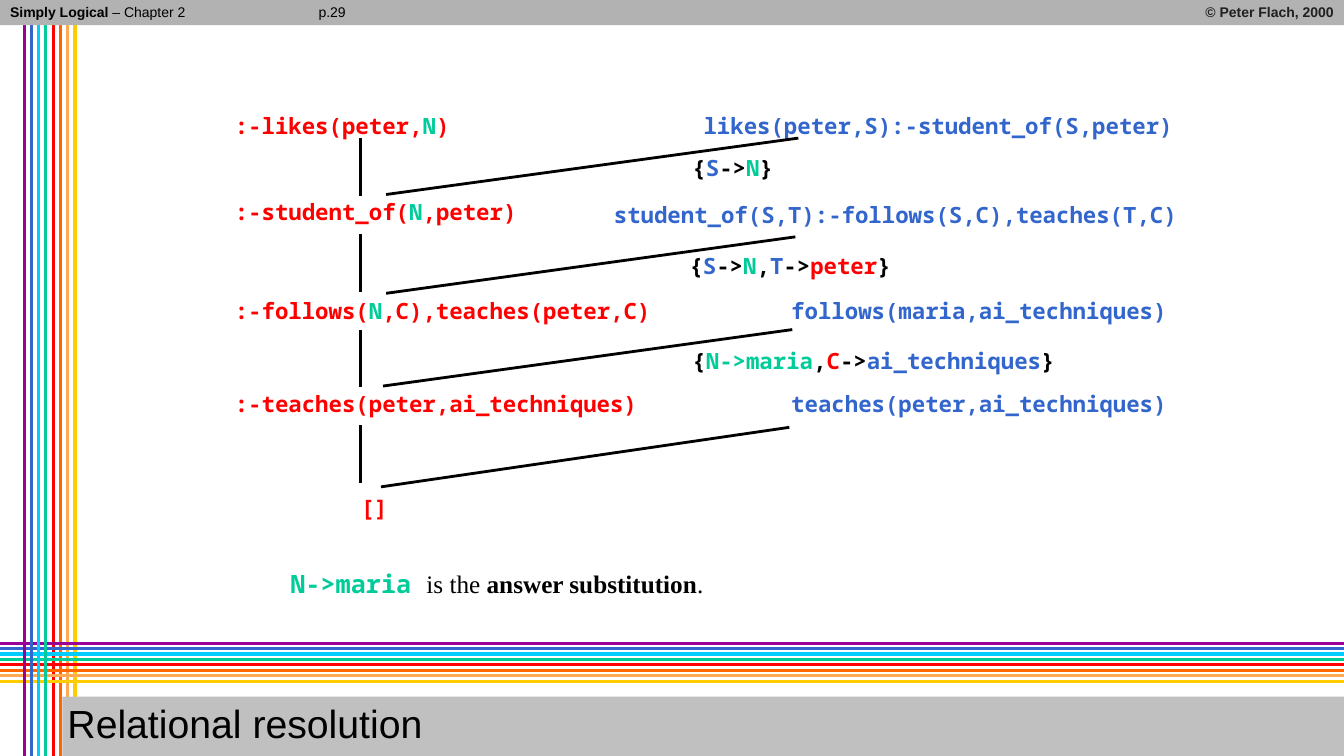
from lxml.etree import SubElement
from pptx import Presentation
from pptx.dml.color import RGBColor
from pptx.enum.shapes import MSO_CONNECTOR, MSO_SHAPE
from pptx.enum.text import MSO_ANCHOR, MSO_AUTO_SIZE, PP_ALIGN
from pptx.oxml.ns import qn
from pptx.util import Inches, Pt

BLACK = RGBColor(0x00, 0x00, 0x00)
CHARCOAL = RGBColor(0x20, 0x20, 0x20)
HEADER_GREY = RGBColor(0xB2, 0xB2, 0xB2)
TITLE_GREY = RGBColor(0xC0, 0xC0, 0xC0)
PURPLE = RGBColor(0x99, 0x00, 0x99)
BLUE = RGBColor(0x33, 0x66, 0xCC)
CYAN = RGBColor(0x00, 0xCC, 0xFF)
GREEN = RGBColor(0x00, 0xCC, 0x99)
RED = RGBColor(0xFF, 0x00, 0x00)
ORANGE = RGBColor(0xFF, 0x66, 0x00)
APRICOT = RGBColor(0xFF, 0xA9, 0x53)
YELLOW = RGBColor(0xFF, 0xCC, 0x00)
RAINBOW = [PURPLE, BLUE, CYAN, GREEN, RED, ORANGE, APRICOT, YELLOW]

SANS, MONO, SERIF = "Arial", "Noto Sans Mono", "Times New Roman"

# left, top, width in percent of the slide, then (text, colour) pieces
GOALS = [
    (17.1, 14.53, 16.88, [(":-likes(peter,", RED), ("N", GREEN), (")", RED)]),
    (17.1, 26, 21.83, [(":-student_of(", RED), ("N", GREEN), (",peter)", RED)]),
    (17.1, 39.07, 31.88, [(":-follows(", RED), ("N", GREEN),
                          (",C),teaches(peter,C)", RED)]),
    (17.1, 51.33, 30.83, [(":-teaches(peter,ai_techniques)", RED)]),
    (26.48, 65.07, 2.85, [("[]", RED)]),
]
CLAUSES = [
    (51.98, 14.53, 35.85, [("likes(peter,S):-student_of(S,peter)", BLUE)]),
    (45.3, 26.4, 42.83, [("student_of(S,T):-follows(S,C),teaches(T,C)", BLUE)]),
    (58.5, 39.07, 28.88, [("follows(maria,ai_techniques)", BLUE)]),
    (58.5, 51.33, 28.88, [("teaches(peter,ai_techniques)", BLUE)]),
]
SUBSTITUTIONS = [
    (51.15, 20.13, 6.83, [("{", BLACK), ("S", BLUE), ("->", BLACK),
                          ("N", GREEN), ("}", BLACK)]),
    (50.93, 33.07, 15.83, [("{", BLACK), ("S", BLUE), ("->", BLACK),
                           ("N", GREEN), (",", BLACK), ("T", BLUE),
                           ("->", BLACK), ("peter", RED), ("}", BLACK)]),
    (51.15, 45.73, 27.83, [("{", BLACK), ("N->maria", GREEN), (",", BLACK),
                           ("C", RED), ("->", BLACK),
                           ("ai_techniques", BLUE), ("}", BLACK)]),
]
CLAUSE_LINKS = [
    (28.73, 25.73, 59.4, 18.27),
    (28.73, 38.8, 59.18, 31.33),
    (28.5, 51.07, 58.95, 43.6),
    (28.35, 64.4, 58.73, 56.53),
]


class SlideBuilder:
    """Draws on one slide; all lengths are percentages of its size."""

    margin = Inches(0.05)
    line_spacing = 0.9

    def __init__(self, presentation):
        self.width = presentation.slide_width
        self.height = presentation.slide_height
        self.slide = presentation.slides.add_slide(presentation.slide_layouts[6])

    def across(self, percent):
        return round(self.width * percent / 100)

    def down(self, percent):
        return round(self.height * percent / 100)

    def box(self, left, top, width, height):
        return (self.across(left), self.down(top),
                self.across(width), self.down(height))

    def line(self, x1, y1, x2, y2, color=BLACK, weight=2):
        connector = self.slide.shapes.add_connector(
            MSO_CONNECTOR.STRAIGHT, self.across(x1), self.down(y1),
            self.across(x2), self.down(y2))
        connector.line.color.rgb = color
        connector.line.width = Pt(weight)
        SubElement(connector._element.spPr, qn("a:effectLst"))

    def bar(self, left, top, width, height, color):
        shape = self.slide.shapes.add_shape(
            MSO_SHAPE.RECTANGLE, *self.box(left, top, width, height))
        shape.shadow.inherit = False
        shape.fill.solid()
        shape.fill.fore_color.rgb = color
        shape.line.fill.background()
        return shape

    def label(self, shape, pieces, size, font=SANS, align=PP_ALIGN.LEFT,
              spacing=line_spacing):
        """Fill a shape with (text, colour[, bold[, font]]) pieces."""
        frame = shape.text_frame
        frame.margin_left = frame.margin_right = self.margin
        frame.margin_top = frame.margin_bottom = self.margin
        paragraph = frame.paragraphs[0]
        paragraph.alignment = align
        paragraph.line_spacing = spacing
        for text, color, *style in pieces:
            run = paragraph.add_run()
            run.text = text
            run.font.size = Pt(size)
            run.font.color.rgb = color
            run.font.bold = style[0] if style else font == MONO
            run.font.name = style[1] if len(style) > 1 else font

    def text(self, left, top, width, height, pieces, size, wrap=False, **style):
        shape = self.slide.shapes.add_textbox(*self.box(left, top, width, height))
        shape.text_frame.word_wrap = wrap
        shape.text_frame.auto_size = MSO_AUTO_SIZE.SHAPE_TO_FIT_TEXT
        self.label(shape, pieces, size, **style)

    def vertical_stripes(self, numbers):
        for number in numbers:
            x = 1.8 + 0.54 * number
            self.line(x, 0, x, 100, RAINBOW[number], 2.25)

    def horizontal_stripes(self):
        for number, color in enumerate(RAINBOW):
            y = 85.07 + 0.72 * number
            self.line(100, y, 0, y, color, 2.25)


def main():
    presentation = Presentation()
    presentation.slide_width = Inches(13.33)
    presentation.slide_height = Inches(7.5)
    builder = SlideBuilder(presentation)

    builder.vertical_stripes(range(4, 8))
    builder.horizontal_stripes()
    builder.vertical_stripes(range(4))

    builder.bar(0, 0, 100, 3.33, HEADER_GREY)
    builder.text(0.38, 0, 19.28, 3.6, [("Simply Logical", BLACK, True),
                                       (" – Chapter 2", BLACK)], 10, wrap=True)
    builder.text(23.33, 0, 2.85, 3.47, [("p.29", BLACK)], 10)
    builder.text(73.35, 0, 26.25, 3.6, [("© Peter Flach, 2000", CHARCOAL, True)],
                 10, wrap=True, align=PP_ALIGN.RIGHT)

    title = builder.bar(4.65, 92.13, 95.35, 7.87, TITLE_GREY)
    title.text_frame.vertical_anchor = MSO_ANCHOR.MIDDLE
    builder.label(title, [("Relational resolution", BLACK)], 28)

    for left, top, width, pieces in GOALS + CLAUSES + SUBSTITUTIONS:
        builder.text(left, top, width, 4.8, pieces, 16, font=MONO)
    for step, link in enumerate(CLAUSE_LINKS):
        top = 18.27 + 12.67 * step
        builder.line(26.85, top, 26.85, top + 7.63)
        builder.line(*link)

    builder.text(21.23, 74.53, 31.58, 5.47, [
        ("N->maria ", GREEN, True, MONO), ("is the ", BLACK),
        ("answer substitution", BLACK, True), (".", BLACK),
    ], 18, font=SERIF, spacing=1.0)

    presentation.save("out.pptx")


if __name__ == "__main__":
    main()
